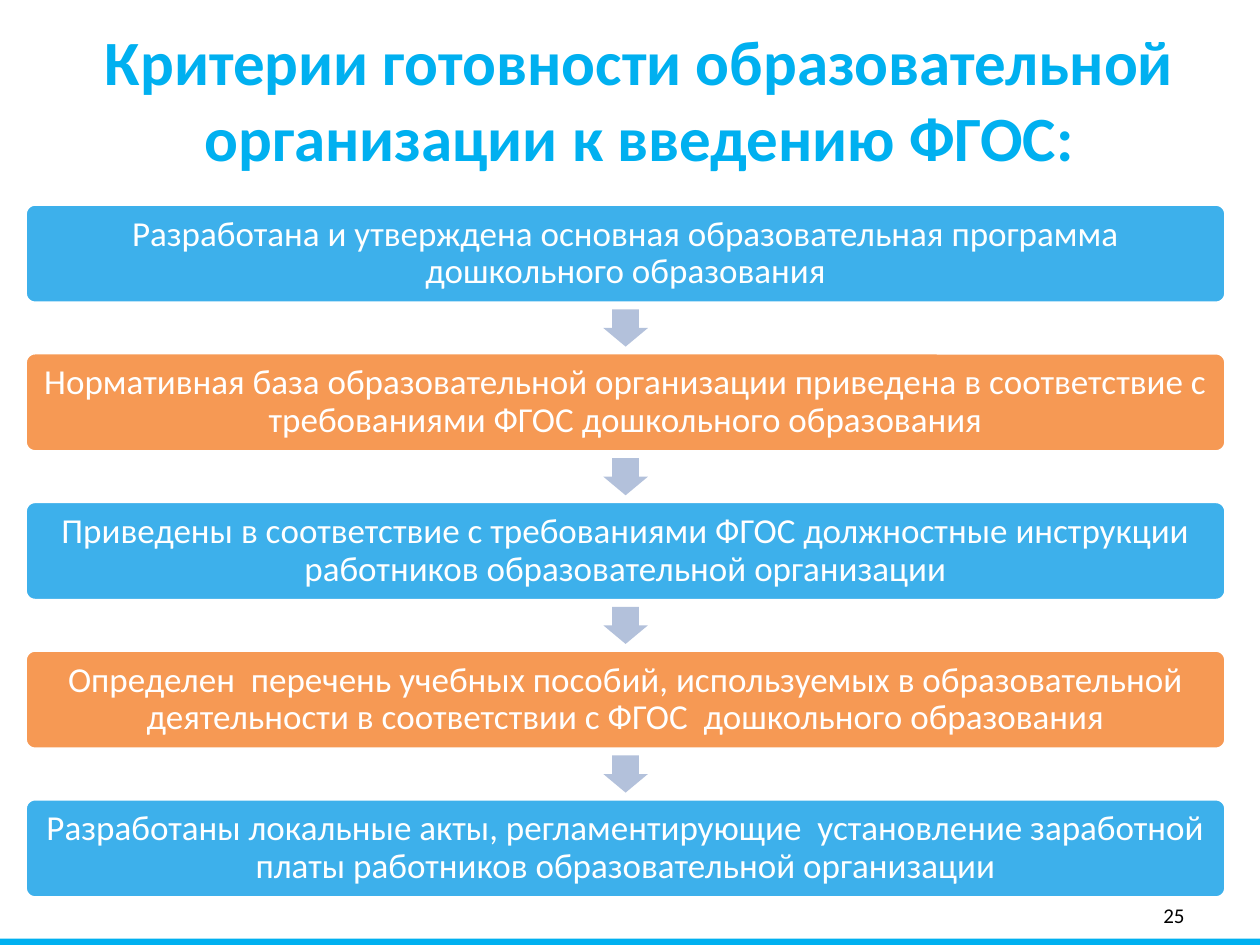
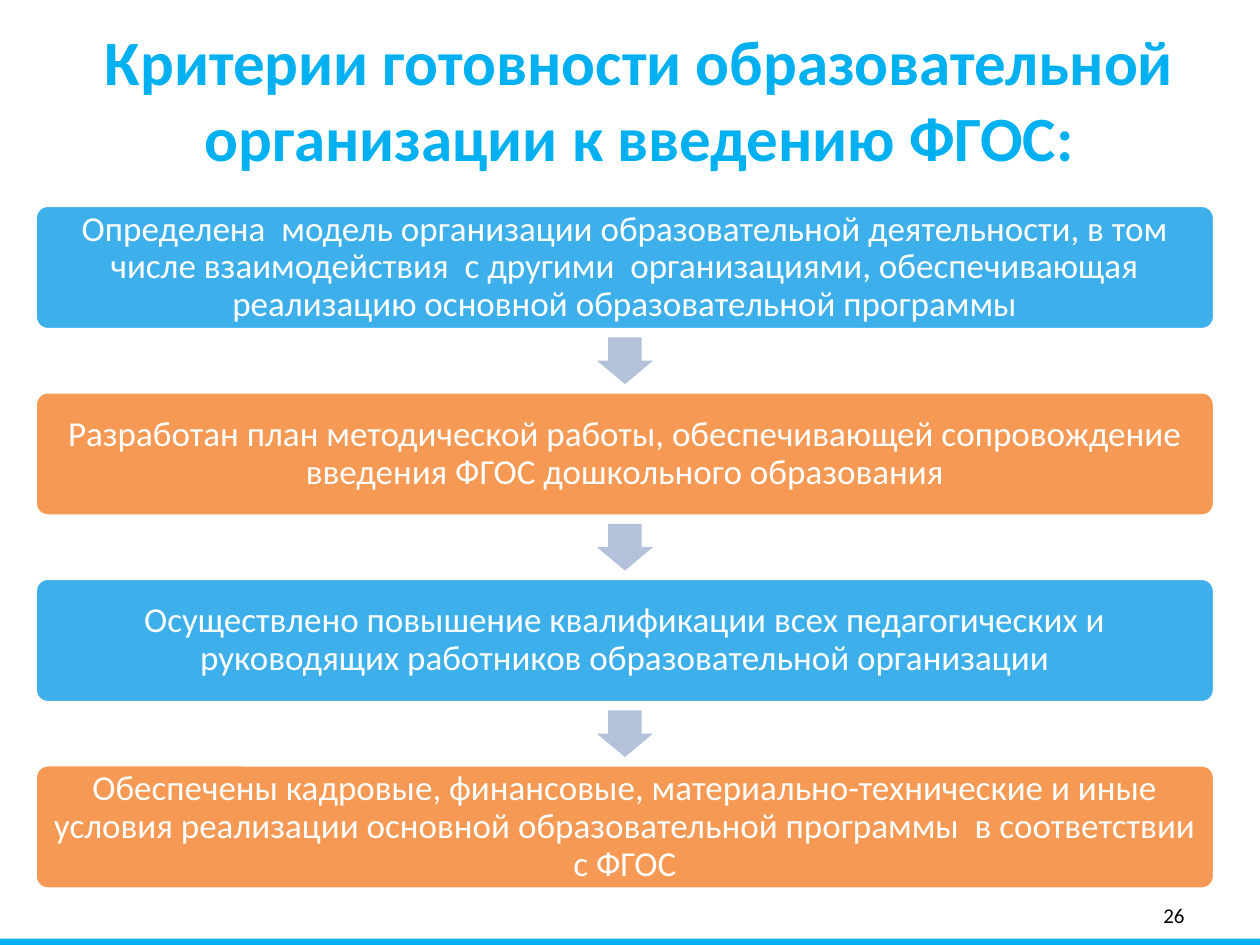
from pptx import Presentation
from pptx.dml.color import RGBColor
from pptx.enum.shapes import MSO_SHAPE
from pptx.enum.text import MSO_ANCHOR, MSO_AUTO_SIZE, PP_ALIGN
from pptx.util import Inches, Pt

SLIDE_WIDTH, SLIDE_HEIGHT = 10, 7.5
TITLE_ONLY = 5
FONT = "Calibri"

ACCENT = RGBColor(0x00, 0xB0, 0xF0)
BLUE = RGBColor(0x3D, 0xB0, 0xEB)
ORANGE = RGBColor(0xF6, 0x99, 0x54)
ARROW_GREY = RGBColor(0xB3, 0xC1, 0xDB)
WHITE = RGBColor(0xFF, 0xFF, 0xFF)
BLACK = RGBColor(0x00, 0x00, 0x00)
STEP_COLOURS = (BLUE, ORANGE)

RECTANGLE = MSO_SHAPE.RECTANGLE
ROUNDED = MSO_SHAPE.ROUNDED_RECTANGLE
DOWN_ARROW = MSO_SHAPE.DOWN_ARROW
TOP, MIDDLE = MSO_ANCHOR.TOP, MSO_ANCHOR.MIDDLE
CENTER, RIGHT = PP_ALIGN.CENTER, PP_ALIGN.RIGHT
NO_AUTOFIT = MSO_AUTO_SIZE.NONE

TITLE = "Критерии готовности образовательной организации к введению ФГОС:"
DOCUMENT_CRITERIA = (
    "Разработана и утверждена основная образовательная программа "
    "дошкольного образования",
    "Нормативная база образовательной организации приведена в соответствие "
    "с требованиями ФГОС дошкольного образования",
    "Приведены в соответствие с требованиями ФГОС должностные инструкции "
    "работников образовательной организации",
    "Определен  перечень учебных пособий, используемых в образовательной "
    "деятельности в соответствии с ФГОС  дошкольного образования",
    "Разработаны локальные акты, регламентирующие  установление заработной "
    "платы работников образовательной организации",
)
RESOURCE_CRITERIA = (
    "Определена  модель организации образовательной деятельности, в том "
    "числе взаимодействия  с другими  организациями, обеспечивающая "
    "реализацию основной образовательной программы",
    "Разработан план методической работы, обеспечивающей сопровождение "
    "введения ФГОС дошкольного образования",
    "Осуществлено повышение квалификации всех педагогических и руководящих "
    "работников образовательной организации",
    "Обеспечены кадровые, финансовые, материально-технические и иные "
    "условия реализации основной образовательной программы  в соответствии "
    "с ФГОС",
)


def write(frame, text, *, size, colour, bold=False, align=CENTER,
          anchor=MIDDLE, inset=(0.1, 0.05), line_spacing=1.0):
    """Fill a text frame; inset is (sides, top and bottom) in inches."""
    frame.word_wrap = True
    frame.auto_size = NO_AUTOFIT
    frame.vertical_anchor = anchor
    frame.margin_left = frame.margin_right = Inches(inset[0])
    frame.margin_top = frame.margin_bottom = Inches(inset[1])
    frame.text = text
    paragraph = frame.paragraphs[0]
    paragraph.alignment = align
    paragraph.line_spacing = line_spacing
    font = paragraph.runs[0].font
    font.name, font.size, font.bold = FONT, Pt(size), bold
    font.color.rgb = colour


def add_filled(slide, preset, box, fill, adjustments=()):
    shape = slide.shapes.add_shape(preset, *map(Inches, box))
    shape.shadow.inherit = False
    shape.fill.solid()
    shape.fill.fore_color.rgb = fill
    shape.line.fill.background()
    for index, value in enumerate(adjustments):
        shape.adjustments[index] = value
    return shape


def add_framed_slide(deck, number):
    """Add a slide with the shared title, bottom band and page number."""
    slide = deck.slides.add_slide(deck.slide_layouts[TITLE_ONLY])
    band = 0.05
    add_filled(slide, RECTANGLE,
               (0, SLIDE_HEIGHT - band, SLIDE_WIDTH, band), ACCENT)
    title = slide.shapes.title
    title.left, title.top = Inches(0.35), Inches(0.13)
    title.width, title.height = Inches(9.45), Inches(1.25)
    write(title.text_frame, TITLE, size=36, colour=ACCENT, bold=True,
          anchor=TOP)
    page = slide.shapes.add_textbox(*map(Inches, (7.17, 7.06, 2.33, 0.4)))
    write(page.text_frame, str(number), size=12, colour=BLACK, align=RIGHT)
    return slide


def add_step_flow(slide, criteria, *, left, top, width, pitch):
    """Stack criteria boxes; a gap with an arrow is half a box high."""
    height = pitch / 1.5
    arrow_width, arrow_length = 0.45 * height, 0.375 * height
    for row, criterion in enumerate(criteria):
        step_top = top + row * pitch
        if row:
            gap_middle = step_top - height / 4
            add_filled(slide, DOWN_ARROW,
                       (left + (width - arrow_width) / 2,
                        gap_middle - arrow_length / 2,
                        arrow_width, arrow_length),
                       ARROW_GREY, (0.6, 0.5))
        step = add_filled(slide, ROUNDED, (left, step_top, width, height),
                          STEP_COLOURS[row % len(STEP_COLOURS)], (0.1,))
        step.line.color.rgb = WHITE
        step.line.width = Pt(2)
        write(step.text_frame, criterion, size=20, colour=WHITE,
              inset=(0.06, 0.06), line_spacing=0.9)


def main():
    deck = Presentation()
    deck.slide_width = Inches(SLIDE_WIDTH)
    deck.slide_height = Inches(SLIDE_HEIGHT)
    add_step_flow(add_framed_slide(deck, 25), DOCUMENT_CRITERIA,
                  left=0.2, top=1.62, width=9.53, pitch=1.18)
    add_step_flow(add_framed_slide(deck, 26), RESOURCE_CRITERIA,
                  left=0.28, top=1.63, width=9.36, pitch=1.48)
    deck.save("out.pptx")


if __name__ == "__main__":
    main()
